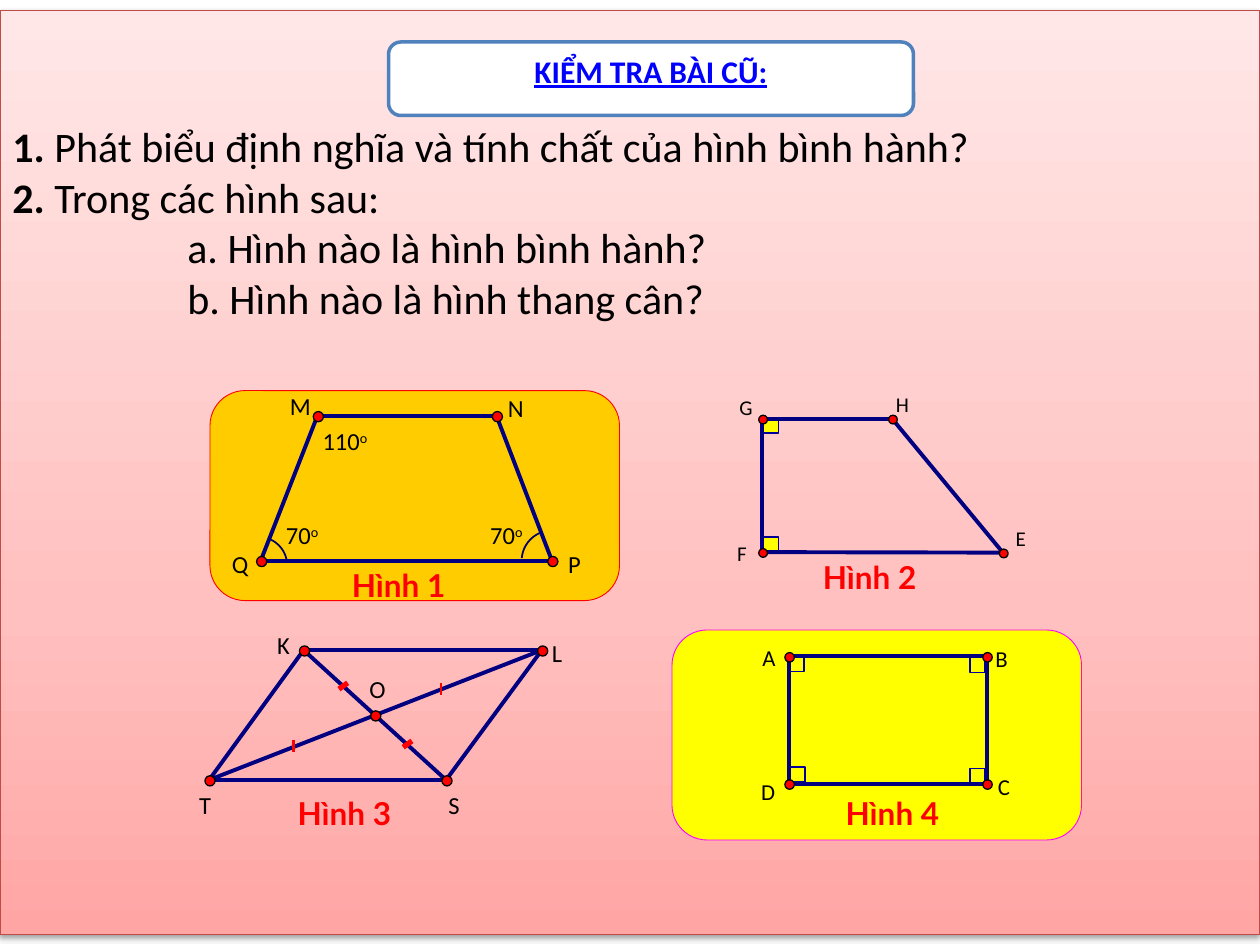
from copy import deepcopy

from lxml.etree import SubElement
from pptx import Presentation
from pptx.dml.color import RGBColor
from pptx.enum.shapes import MSO_CONNECTOR as Link, MSO_SHAPE as Form
from pptx.enum.text import MSO_ANCHOR as Anchor, MSO_AUTO_SIZE as Fit, PP_ALIGN as Align
from pptx.oxml.ns import qn
from pptx.util import Pt

WHITE = RGBColor(0xFF, 0xFF, 0xFF)
BLACK = RGBColor(0x00, 0x00, 0x00)
RED = RGBColor(0xFF, 0x00, 0x00)
BLUE = RGBColor(0x00, 0x00, 0xFF)
NAVY = RGBColor(0x00, 0x00, 0x80)
INK = RGBColor(0x00, 0x00, 0x66)
MARK = RGBColor(0x00, 0x00, 0x99)
STEEL = RGBColor(0x4F, 0x81, 0xBD)
BRICK = RGBColor(0xBF, 0x4C, 0x48)
AMBER = RGBColor(0xFF, 0xCC, 0x00)
YELLOW = RGBColor(0xFF, 0xFF, 0x00)
MAGENTA = RGBColor(0xFF, 0x00, 0xFF)
BLUSH = [(0, RGBColor(0xFF, 0xA6, 0xA5)), (0.35, RGBColor(0xFF, 0xC0, 0xBF)),
         (1, RGBColor(0xFF, 0xE7, 0xE7))]

CARDS = [(120, 223.2, AMBER, RED), (384, 360, YELLOW, MAGENTA)]
RIGHT_ANGLES = [(450.7, 375.1), (451.4, 438.5), (554.4, 375.8), (554.4, 439.2),
                (436.3, 306.7), (436.3, 239)]
ANGLES = [("70", 163.4, 297.4, 20.2), ("110", 184.3, 243.4, 28.1), ("70", 280.1, 297.4, 20.2)]
ARCS = [(147.6, 323.3, 16.6, 292, 348), (315.4, 320.4, 17.3, 185, 246)]
TICKS = [((167.8, 422.6), (167.8, 429.8), 1.5), ((252, 390.2), (252, 397.4), 1.5),
         ((235.4, 423.4), (230.4, 427), 3), ((198.7, 390.2), (193.7, 393.8), 3)]
FIGURES = [
    {"size": 14, "dot": 5.8, "edges": "MQ NP MN QP", "caption": (167.8, 319.7),
     "points": {"P": (315.4, 320.4), "N": (283.7, 237.6), "M": (181.4, 237.6), "Q": (149, 320.4)},
     "labels": {"P": (324.7, 313.9, 9.4), "N": (290.2, 224.6, 10),
                "M": (165.6, 223.2, 11.5), "Q": (132.5, 313.9, 10.8)}},
    {"size": 12, "dot": 5, "edges": "GF HE GH FE", "caption": (437, 315.4),
     "points": {"G": (435.6, 239.3), "F": (435.6, 315.5), "H": (509.8, 239.3), "E": (573.1, 315.8)},
     "labels": {"G": (422.6, 225.4, 9.4), "F": (421.2, 308.9, 7.2),
                "H": (511.9, 223.9, 8.6), "E": (580.3, 300.2, 7.9)}},
    {"size": 14, "dot": 5.8, "edges": "KT KL LS TS KS LT", "caption": (136.8, 450),
     "points": {"O": (214.2, 408.6), "S": (254.9, 445.7), "K": (173.5, 371.5),
                "T": (119.5, 445.7), "L": (309.6, 371.5)},
     "labels": {"O": (211, 385.2, 10.8), "S": (256.3, 451.4, 9.4), "K": (158.4, 360, 9.4),
                "T": (113.8, 451.4, 8.6), "L": (315.4, 364.3, 7.9)}},
    {"size": 13, "dot": 5.4, "edges": "AD BC AB DC", "caption": (450, 450),
     "points": {"C": (563.8, 447.8), "B": (563.8, 375.1), "A": (450.7, 375.1), "D": (450.7, 447.8)},
     "labels": {"C": (570.2, 441.4, 9.4), "B": (568.8, 368.6, 8.6),
                "A": (435.6, 367.9, 8.6), "D": (434.9, 444.2, 9.4)}},
]


class Sketch:
    """Draws styled elements on one page, with all lengths in points."""

    font = "Calibri"

    def __init__(self, page):
        self.page = page

    def shape(self, form, left, top, width, height, fill, line, weight):
        shape = self.page.shapes.add_shape(form, Pt(left), Pt(top), Pt(width), Pt(height))
        shape.shadow.inherit = False
        if fill is None:
            shape.fill.background()
        else:
            shape.fill.solid()
            shape.fill.fore_color.rgb = fill
        shape.line.color.rgb = line
        shape.line.width = Pt(weight)
        return shape

    def backdrop(self, top, width, height):
        panel = self.shape(Form.RECTANGLE, 0, top, width, height, WHITE, BRICK, 0.75)
        panel.fill.gradient()
        panel.fill.gradient_angle = 90
        properties = panel._element.spPr
        stops = properties.find(qn("a:gradFill")).find(qn("a:gsLst"))
        stops.append(deepcopy(stops[0]))
        for stop, (position, color) in zip(panel.fill.gradient_stops, BLUSH):
            stop.position = position
            stop.color.rgb = color
        shadow = SubElement(properties.find(qn("a:effectLst")), qn("a:outerShdw"),
                            blurRad=str(Pt(3.1)), dist=str(Pt(1.6)), dir="5400000", rotWithShape="0")
        tint = SubElement(shadow, qn("a:srgbClr"), val=str(BLACK))
        SubElement(tint, qn("a:alpha"), val="38000")

    def line(self, start, end, color, weight):
        link = self.page.shapes.add_connector(Link.STRAIGHT, *map(Pt, start + end))
        link.line.color.rgb = color
        link.line.width = Pt(weight)
        SubElement(link._element.spPr, qn("a:effectLst"))

    def arc(self, x, y, radius, start, end):
        arc = self.shape(Form.ARC, x - radius, y - radius, 2 * radius, 2 * radius, None, INK, 1)
        arc.adjustments[0], arc.adjustments[1] = start * 0.6, end * 0.6

    def dot(self, x, y, size):
        corner = (x + 0.5 - size / 2, y + 0.5 - size / 2)
        self.shape(Form.OVAL, *corner, size, size, RED, BLACK, 0)

    def box(self, left, top, width, height):
        box = self.page.shapes.add_textbox(Pt(left), Pt(top), Pt(width), Pt(height))
        box.text_frame.word_wrap = True
        return box.text_frame

    def style(self, para, size, color, align=Align.LEFT, font=font, bold=None):
        para.alignment = align
        para.font.name, para.font.size, para.font.bold = font, Pt(size), bold
        para.font.color.rgb = color

    def indent(self, para, margin, hanging):
        properties = para._p.get_or_add_pPr()
        properties.set("marL", str(Pt(margin)))
        properties.set("indent", str(Pt(-hanging)))

    def label(self, text, left, top, width, size, raised=""):
        frame = self.box(left, top, width, size * 1.2)
        frame.word_wrap = False
        frame.auto_size = Fit.SHAPE_TO_FIT_TEXT
        frame.margin_left = frame.margin_right = frame.margin_top = frame.margin_bottom = 0
        para = frame.paragraphs[0]
        para.add_run().text = text
        if raised:
            span = para.add_run()
            span.text = raised
            span.font._element.set("baseline", "30000")
        self.style(para, size, BLACK)

    def title(self, text):
        plate = self.shape(Form.ROUNDED_RECTANGLE, 222, 24, 300, 42, WHITE, STEEL, 2)
        plate.text_frame.vertical_anchor = Anchor.TOP
        para = plate.text_frame.paragraphs[0]
        para.text = text
        para.space_before = Pt(3.6)
        self.style(para, 18, BLUE, Align.CENTER, bold=True)
        para.font.underline = True
        self.indent(para, 27, 27)

    def questions(self, lines):
        frame = self.box(0, 65.5, 720, 124)
        for index, (number, text) in enumerate(lines):
            para = frame.add_paragraph() if index else frame.paragraphs[0]
            if number:
                span = para.add_run()
                span.text = number + " "
                span.font.bold = True
            para.add_run().text = text
            self.style(para, 24, BLACK, Align.JUSTIFY)
            self.indent(para, *((28, 28) if number else (100, 0)))

    def caption(self, text, left, top):
        para = self.box(left, top, 120, 28.8).paragraphs[0]
        para.text = text
        self.style(para, 18, RED, Align.CENTER, "Lato", True)
        self.indent(para, 28, 28)

    def figure(self, size, dot, edges, points, labels, **_):
        for start, end in edges.split():
            self.line(points[start], points[end], NAVY, 2.25)
        for name, point in points.items():
            self.dot(*point, dot)
            self.label(name, *labels[name], size)


def main():
    deck = Presentation()
    deck.slide_width, deck.slide_height = Pt(720), Pt(540)
    sketch = Sketch(deck.slides.add_slide(deck.slide_layouts[6]))
    sketch.backdrop(6, 720, 528)
    sketch.title("KIỂM TRA BÀI CŨ:")
    sketch.questions([("1.", "Phát biểu định nghĩa và tính chất của hình bình hành?"),
                      ("2.", "Trong các hình sau:"),
                      ("", "a. Hình nào là hình bình hành?"),
                      ("", "b. Hình nào là hình thang cân?")])
    for left, top, fill, line in CARDS:
        sketch.shape(Form.ROUNDED_RECTANGLE, left, top, 234, 120, fill, line, 0.5)
    for left, top in RIGHT_ANGLES:
        sketch.shape(Form.RECTANGLE, left, top, 8.6, 8.6, YELLOW, MARK, 1)
    for figure in FIGURES:
        sketch.figure(**figure)
    for degrees, left, top, width in ANGLES:
        sketch.label(degrees, left, top, width, 14, raised="o")
    for arc in ARCS:
        sketch.arc(*arc)
    for start, end, weight in TICKS:
        sketch.line(start, end, RED, weight)
    for number, figure in enumerate(FIGURES, 1):
        sketch.caption(f"Hình {number}", *figure["caption"])
    deck.save("out.pptx")


if __name__ == "__main__":
    main()
